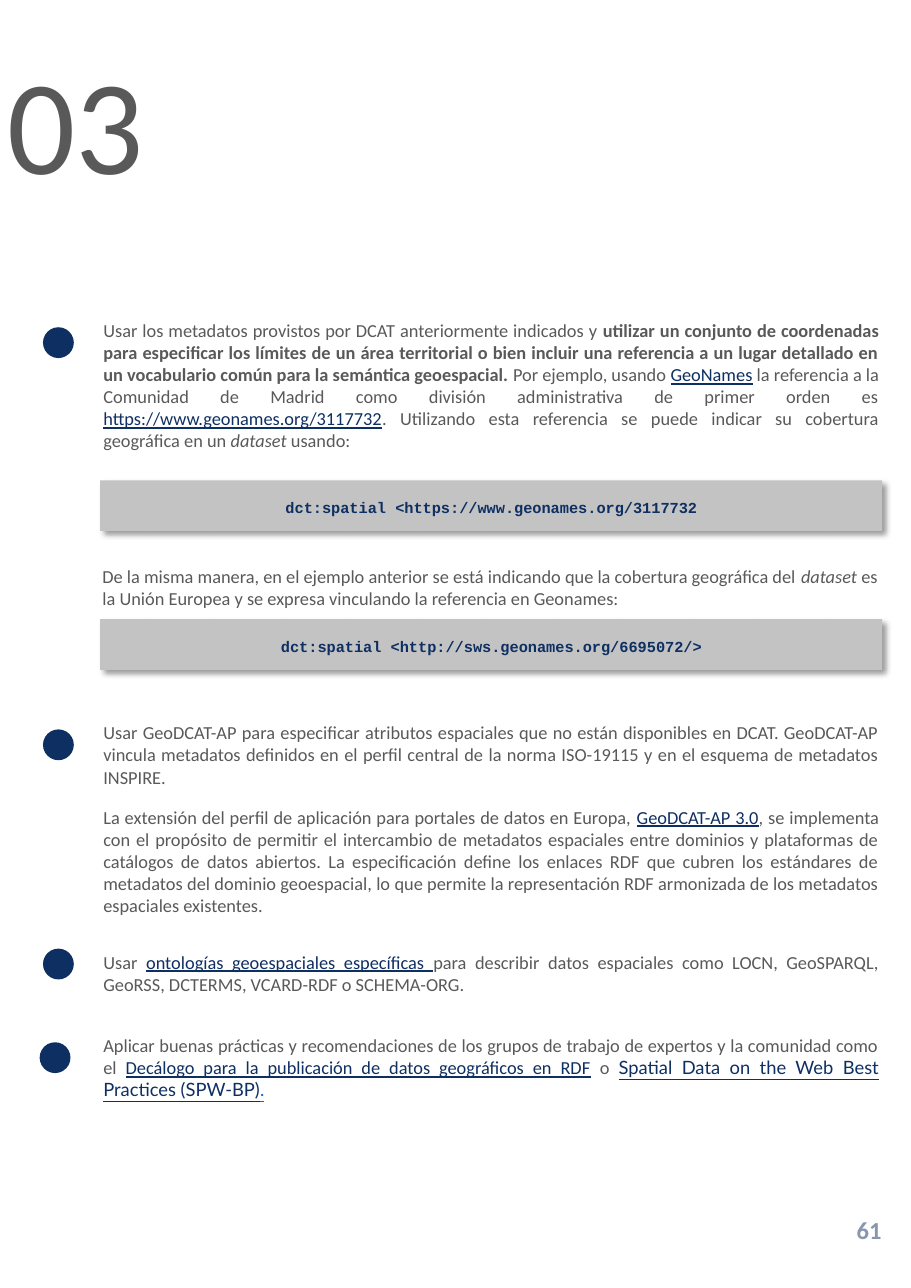
import dataclasses

import lxml.etree
import pptx
import pptx.dml.color
import pptx.enum.shapes
import pptx.enum.text
import pptx.oxml
import pptx.oxml.ns
import pptx.util

PX = 9144  # EMU in one px, at 100 px to the inch
ALIGN = pptx.enum.text.PP_ALIGN
ANCHOR = pptx.enum.text.MSO_ANCHOR
SHAPE = pptx.enum.shapes.MSO_SHAPE


@dataclasses.dataclass(frozen=True)
class Theme:
    text: str = "595959"
    navy: str = "0E2F62"
    full_stop: str = "0969DA"
    code_fill: str = "C3C3C3"
    page_number: str = "8996AE"
    font: str = "Calibri"
    code_font: str = "Courier New"
    link_font: str = "Lato"
    chapter_size: int = 88
    page_size: int = 16
    body_size: int = 12
    code_size: int = 10


THEME = Theme()
BOLD = {"bold": True}
ITALIC = {"italic": True}
LINK = {"color": THEME.navy, "underline": True}
LATO_LINK = {**LINK, "font": THEME.link_font}
LATO_STOP = {**LATO_LINK, "color": THEME.full_stop}

TEXT_LEFT, TEXT_WIDTH = 84, 724
CODE_LEFT, CODE_WIDTH, CODE_HEIGHT = 91, 710, 46
DOT_SIZE = 28

# Each entry: dot left, dot top, text top, text height, paragraphs
RECOMMENDATIONS = [
    (39, 297, 285, 151, [[
        "Usar los metadatos provistos por DCAT anteriormente indicados y ",
        ("utilizar un conjunto de coordenadas para especificar los límites de un área "
         "territorial o bien incluir una referencia a un lugar detallado en un vocabulario "
         "común para la semántica geoespacial. ", BOLD),
        "Por ejemplo, usando ",
        ("GeoNames", LINK),
        " la referencia a la Comunidad de Madrid como división administrativa de primer "
        "orden es ",
        ("https://www.geonames.org/3117732", LINK),
        ". Utilizando esta referencia se puede indicar su cobertura geográfica en un ",
        ("dataset", ITALIC),
        " usando:",
    ]]),
    (39, 662, 650, 188, [
        ["Usar GeoDCAT-AP para especificar atributos espaciales que no están disponibles en "
         "DCAT. GeoDCAT-AP vincula metadatos definidos en el perfil central de la norma "
         "ISO-19115 y en el esquema de metadatos INSPIRE."],
        ["La extensión del perfil de aplicación para portales de datos en Europa, ",
         ("GeoDCAT-AP 3.0", LINK),
         ", se implementa con el propósito de permitir el intercambio de metadatos espaciales "
         "entre dominios y plataformas de catálogos de datos abiertos. La especificación "
         "define los enlaces RDF que cubren los estándares de metadatos del dominio "
         "geoespacial, lo que permite la representación RDF armonizada de los metadatos "
         "espaciales existentes."],
    ]),
    (39, 861, 858, 50, [[
        "Usar ",
        ("ontologías geoespaciales específicas ", LINK),
        "para describir datos espaciales como LOCN, GeoSPARQL, GeoRSS, DCTERMS, VCARD-RDF "
        "o SCHEMA-ORG.",
    ]]),
    (36, 946, 934, 71, [[
        "Aplicar buenas prácticas y recomendaciones de los grupos de trabajo de expertos y "
        "la comunidad como el ",
        ("Decálogo para la publicación de datos geográficos en RDF", LINK),
        " o ",
        ("Spatial Data on the Web Best Practices (SPW-BP)", LATO_LINK),
        (".", LATO_STOP),
    ]]),
]

EUROPE_NOTE = [[
    "De la misma manera, en el ejemplo anterior se está indicando que la cobertura "
    "geográfica del ",
    ("dataset", ITALIC),
    " es la Unión Europea y se expresa vinculando la referencia en Geonames:",
]]

CODE_LINES = [
    (436, "dct:spatial <https://www.geonames.org/3117732"),
    (562, "dct:spatial <http://sws.geonames.org/6695072/>"),
]


def px(*lengths):
    return [pptx.util.Emu(length * PX) for length in lengths]


def rgb(color):
    return pptx.dml.color.RGBColor.from_string(color)


def write_text(shape, paragraphs, *, size=THEME.body_size, font=THEME.font, color=THEME.text,
               bold=False, align=ALIGN.LEFT, anchor=ANCHOR.TOP, line_spacing=1.0,
               gap=0, margins=(10, 5, 10, 5)):
    """Fill a shape; a run is a string or a (string, format changes) pair."""
    frame = shape.text_frame
    frame.word_wrap = True
    frame.auto_size = pptx.enum.text.MSO_AUTO_SIZE.NONE
    frame.vertical_anchor = anchor
    (frame.margin_left, frame.margin_top,
     frame.margin_right, frame.margin_bottom) = px(*margins)
    for index, runs in enumerate(paragraphs):
        paragraph = frame.add_paragraph() if index else frame.paragraphs[0]
        paragraph.alignment = align
        paragraph.line_spacing = line_spacing
        paragraph.space_before = pptx.util.Pt(gap if index else 0)
        for item in runs:
            words, changes = (item, {}) if isinstance(item, str) else item
            run = paragraph.add_run()
            run.text = words
            run.font.size = pptx.util.Pt(size)
            run.font.name = changes.get("font", font)
            run.font.bold = changes.get("bold", bold)
            run.font.italic = changes.get("italic", False)
            run.font.underline = changes.get("underline", False)
            run.font.color.rgb = rgb(changes.get("color", color))


def add_text(slide, box, paragraphs, **text_format):
    write_text(slide.shapes.add_textbox(*px(*box)), paragraphs, **text_format)


def add_filled_shape(slide, kind, box, fill):
    shape = slide.shapes.add_shape(kind, *px(*box))
    shape.shadow.inherit = False
    shape.fill.solid()
    shape.fill.fore_color.rgb = rgb(fill)
    shape.line.fill.background()
    return shape


def add_drop_shadow(shape):
    effects = shape._element.spPr.find(pptx.oxml.ns.qn("a:effectLst"))
    effects.append(pptx.oxml.parse_xml(
        f'<a:outerShdw {pptx.oxml.ns.nsdecls("a")} blurRad="50800" dist="38100" '
        'dir="2700000" algn="tl" rotWithShape="0">'
        '<a:srgbClr val="000000"><a:alpha val="40000"/></a:srgbClr></a:outerShdw>'))


def add_code_bar(slide, top, code):
    bar = add_filled_shape(slide, SHAPE.RECTANGLE,
                           (CODE_LEFT, top, CODE_WIDTH, CODE_HEIGHT), THEME.code_fill)
    add_drop_shadow(bar)
    write_text(bar, [[code]], size=THEME.code_size, font=THEME.code_font, color=THEME.navy,
               bold=True, align=ALIGN.CENTER, anchor=ANCHOR.MIDDLE, line_spacing=1.2)


def add_recommendation(slide, dot_left, dot_top, text_top, text_height, paragraphs):
    add_filled_shape(slide, SHAPE.OVAL, (dot_left, dot_top, DOT_SIZE, DOT_SIZE), THEME.navy)
    add_text(slide, (TEXT_LEFT, text_top, TEXT_WIDTH, text_height), paragraphs,
             align=ALIGN.JUSTIFY, gap=12)


def set_chapter_number(slide, number):
    title = slide.shapes.title
    title.left, title.top, title.width, title.height = px(6, 43, 126, 100)
    write_text(title, [[number]], size=THEME.chapter_size, align=ALIGN.CENTER,
               line_spacing=0.9, margins=(0, 10, 0, 5))


def main():
    presentation = pptx.Presentation()
    presentation.slide_width, presentation.slide_height = px(827, 1169)
    title_only = presentation.slide_layouts[5]
    slide = presentation.slides.add_slide(title_only)

    set_chapter_number(slide, "03")
    for recommendation in RECOMMENDATIONS:
        add_recommendation(slide, *recommendation)
    for top, code in CODE_LINES:
        add_code_bar(slide, top, code)
    add_text(slide, (50, 508, 771, 50), EUROPE_NOTE, margins=(43, 5, 10, 5))
    add_text(slide, (751, 1098, 59, 37), [["61"]], size=THEME.page_size,
             color=THEME.page_number, bold=True, align=ALIGN.RIGHT)

    presentation.save("out.pptx")


if __name__ == "__main__":
    main()
